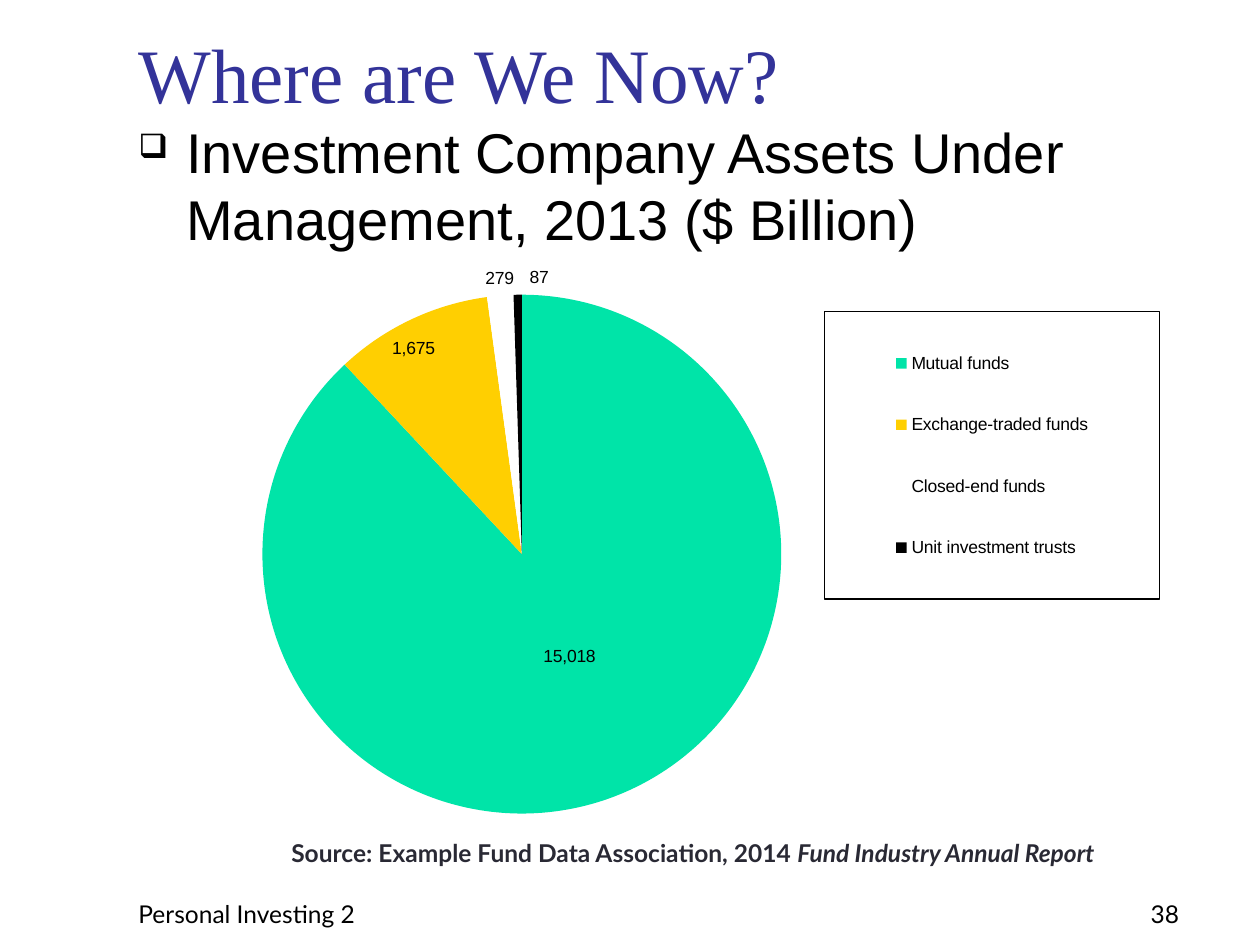
from lxml import etree
from pptx import Presentation, util as u
from pptx.chart.data import CategoryChartData
from pptx.dml.color import RGBColor
from pptx.enum import chart as ch, text
from pptx.oxml import ns

# Content
TITLE = "Where are We Now?"
BULLET = "Investment Company Assets Under Management, 2013 ($ Billion)"
SOURCE = [("Source: Example Fund Data Association, 2014 ", False),
          ("Fund Industry Annual Report", True)]
FOOTER, PAGE = "Personal Investing 2", "38"
LABEL = ch.XL_LABEL_POSITION
FUNDS = [  # name, assets, colour, label position, label shift (share of chart)
    ("Mutual funds", 15018, "green", LABEL.CENTER, (0, -0.03)),
    ("Exchange-traded funds", 1675, "yellow", LABEL.INSIDE_END, (-0.02, 0.02)),
    ("Closed-end funds", 279, "white", LABEL.OUTSIDE_END, (0, 0)),
    ("Unit investment trusts", 87, "black", LABEL.OUTSIDE_END, (0.02, 0)),
]
COLORS = {"title": "333399", "source": "292934", "green": "00E4A8",
          "yellow": "FFCF01", "white": "FFFFFF", "black": "000000"}

# Layout in inches; chart parts as shares of the chart's size
LEFT = 1
CHART = (0.71, 2, 8.58, 4.75)
PIE_AREA = (0.16, 0.07, 0.48, 0.87)
LEGEND_AREA = (0.68, 0.1, 0.31, 0.48)


def rgb(name):
    return RGBColor.from_string(COLORS[name])


def style(font, name, size, color, bold=None, italic=None):
    font.name, font.size = name, u.Pt(size)
    font.color.rgb = rgb(color)
    font.bold, font.italic = bold, italic


def add_text(slide, box, runs, font, size, color="black", bold=None,
             align=text.PP_ALIGN.LEFT, anchor=text.MSO_ANCHOR.TOP):
    tf = slide.shapes.add_textbox(*map(u.Inches, box)).text_frame
    tf.word_wrap, tf.vertical_anchor = True, anchor
    p = tf.paragraphs[0]
    p.alignment = align
    for words, italic in runs:
        r = p.add_run()
        r.text = words
        style(r.font, font, size, color, bold, italic)
    return p


def add_bullet(p, char, indent, size):
    pPr = p._p.get_or_add_pPr()
    pPr.set("marL", str(u.Inches(indent)))
    pPr.set("indent", str(-u.Inches(indent)))
    before = etree.SubElement(pPr, ns.qn("a:spcBef"))
    etree.SubElement(before, ns.qn("a:spcPct"), val="20000")
    etree.SubElement(pPr, ns.qn("a:buSzPct"), val=str(size * 1000))
    etree.SubElement(pPr, ns.qn("a:buChar"), char=char)


def place(part, index, values):
    """Put a manual layout into a chart part, at the given child index."""
    for old in part.findall(ns.qn("c:layout")):
        part.remove(old)
    layout = etree.Element(ns.qn("c:layout"))
    manual = etree.SubElement(layout, ns.qn("c:manualLayout"))
    for tag, val in values.items():
        etree.SubElement(manual, ns.qn("c:" + tag), val=str(val))
    part.insert(index, layout)


def edges(area):
    return {"xMode": "edge", "yMode": "edge", **dict(zip("xywh", area))}


def add_pie(slide):
    data = CategoryChartData(number_format="#,##0")
    data.categories = [f[0] for f in FUNDS]
    data.add_series("Series 1", [f[1] for f in FUNDS])
    chart = slide.shapes.add_chart(
        ch.XL_CHART_TYPE.PIE, *map(u.Inches, CHART), data).chart
    style(chart.font, "Arial", 10, "black")
    chart.has_title = False
    plot = chart.plots[0]
    plot.vary_by_categories = True
    series = plot.series[0]
    labels = series.data_labels
    labels.show_value = True
    labels.number_format, labels.number_format_is_linked = "#,##0", False
    for i, (_, _, color, position, shift) in enumerate(FUNDS):
        point = series.points[i]
        point.format.fill.solid()
        point.format.fill.fore_color.rgb = rgb(color)
        point.format.line.fill.background()
        point.data_label.position = position
    dLbls = labels._element
    for dLbl, fund in zip(dLbls.findall(ns.qn("c:dLbl")), FUNDS):
        if any(fund[4]):
            place(dLbl, 1, dict(zip("xy", fund[4])))
    for leader in dLbls.findall(ns.qn("c:showLeaderLines")):
        leader.set("val", "0")
    place(chart._chartSpace.chart.plotArea, 0,
          {"layoutTarget": "inner", **edges(PIE_AREA)})

    # Framed legend
    chart.has_legend = True
    legend = chart.legend
    legend.position = ch.XL_LEGEND_POSITION.RIGHT
    legend.include_in_layout = False
    box = legend._element
    place(box, 1, edges(LEGEND_AREA))
    spPr = etree.Element(ns.qn("c:spPr"))
    line = etree.SubElement(spPr, ns.qn("a:ln"), w=str(u.Pt(0.75)))
    fill = etree.SubElement(line, ns.qn("a:solidFill"))
    etree.SubElement(fill, ns.qn("a:srgbClr"), val=COLORS["black"])
    box.find(ns.qn("c:overlay")).addnext(spPr)


def main():
    prs = Presentation()
    prs.slide_width, prs.slide_height = u.Inches(10), u.Inches(7.5)
    slide = prs.slides.add_slide(prs.slide_layouts[5])

    # Title
    title = slide.shapes.title
    title.left, title.top, title.width, title.height = map(
        u.Inches, (LEFT, 0.17, 8.7, 0.82))
    tf = title.text_frame
    tf.text = TITLE
    tf.vertical_anchor = text.MSO_ANCHOR.BOTTOM
    tf.auto_size = text.MSO_AUTO_SIZE.NONE
    tf.paragraphs[0].alignment = text.PP_ALIGN.LEFT
    style(tf.paragraphs[0].runs[0].font, "Times New Roman", 44, "title")

    # Bullet and chart
    p = add_text(slide, (LEFT, 0.88, 8.63, 1.25), [(BULLET, None)], "Arial", 32)
    add_bullet(p, "❑", 0.38, 60)
    add_pie(slide)

    # Source, footer and page number
    center, bottom = text.PP_ALIGN.CENTER, text.MSO_ANCHOR.BOTTOM
    add_text(slide, (1.54, 6.6, 7.92, 0.64), SOURCE, "Lato", 14, "source",
             bold=True, align=center)
    add_text(slide, (LEFT, 6.92, 3, 0.5), [(FOOTER, None)], "Lato", 14,
             anchor=bottom)
    add_text(slide, (8.58, 6.92, 1.33, 0.5), [(PAGE, None)], "Lato", 14,
             align=center, anchor=bottom)
    prs.save("out.pptx")


if __name__ == "__main__":
    main()
